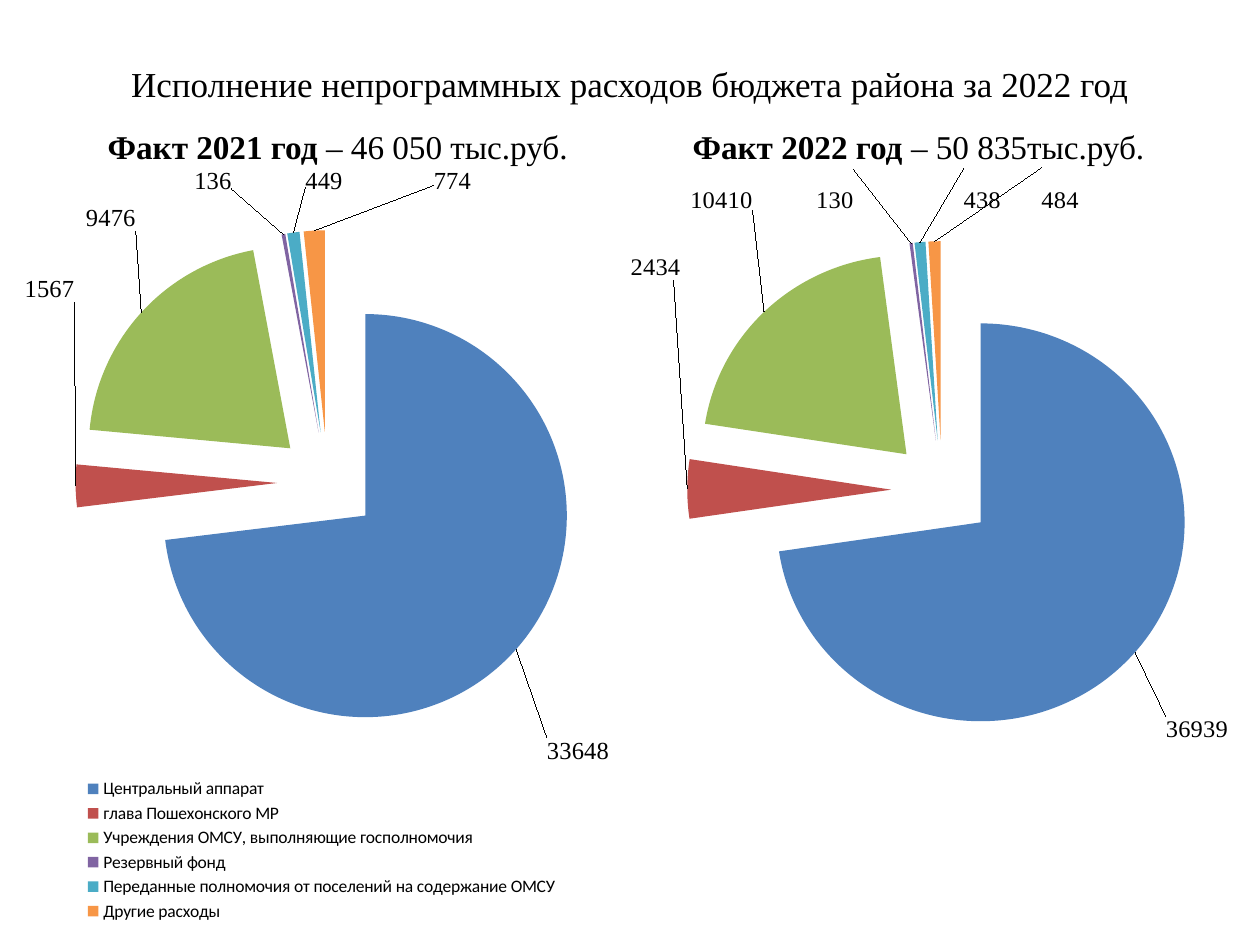
from dataclasses import dataclass

import pptx
import pptx.chart.data
import pptx.dml.color
import pptx.enum.chart
import pptx.enum.text
import pptx.oxml
import pptx.oxml.ns
import pptx.util

Inches, Pt = pptx.util.Inches, pptx.util.Pt
RGB = pptx.dml.color.RGBColor.from_string
qn = pptx.oxml.ns.qn


@dataclass(frozen=True)
class Theme:
    text: str = "000000"
    slices: tuple = ("4F81BD", "C0504D", "9BBB59", "8064A2", "4BACC6", "F79646")
    serif: str = "Times New Roman"
    sans: str = "Calibri"
    title: int = 20
    heading: int = 19
    label: int = 14
    legend: int = 10


@dataclass(frozen=True)
class Box:
    x: float
    y: float
    w: float
    h: float


@dataclass(frozen=True)
class YearPie:
    chart_box: Box
    heading_box: Box
    year: str
    total: str
    categories: tuple
    values: tuple
    plot: Box        # fractions of the chart
    shifts: tuple    # label offsets, fractions of the chart
    legend: Box | None = None


THEME = Theme()
TITLE = "Исполнение непрограммных расходов бюджета района за 2022 год"
EXPLOSION = 25
CATEGORIES = (
    "Центральный аппарат",
    "глава Пошехонского МР",
    "Учреждения ОМСУ, выполняющие госполномочия",
    "Резервный фонд",
    "Переданные полномочия от поселений на содержание ОМСУ",
    "Другие расходы",
)
PIES = (
    YearPie(
        Box(0, 1.33, 5, 6.02), Box(0.47, 1.02, 4.42, 0.35),
        "Факт 2021 год ", "– 46 050 тыс.руб.",
        CATEGORIES, (33648, 1567, 9476, 136, 449, 774),
        Box(0.12, 0.08, 0.8, 0.67),
        ((0.04, 0.11), (0.01, -0.26), (0, -0.1),
         (-0.08, -0.05), (0.08, -0.05), (0.22, -0.05)),
        Box(0.12, 0.8, 0.78, 0.2),
    ),
    YearPie(
        Box(5, 1.33, 5, 6.02), Box(5.08, 1.02, 4.42, 0.35),
        "Факт 2022 год ", "– 50 835тыс.руб.",
        ("1", "2", "3", "4", "5", "6"), (36939, 2434, 10410, 130, 438, 484),
        Box(0.09, 0, 0.81, 0.82),
        ((0.04, 0.08), (-0.01, -0.3), (-0.01, -0.13),
         (-0.09, -0.09), (0.1, -0.09), (0.2, -0.09)),
    ),
)


def set_font(font, name: str, size: int) -> None:
    font.name, font.size = name, Pt(size)
    font.color.rgb = RGB(THEME.text)


def add_text(s, box: Box, runs: tuple, size: int, anchor) -> None:
    """Add one centred line; runs are (text, bold) pairs."""
    sp = s.shapes.add_textbox(*map(Inches, (box.x, box.y, box.w, box.h)))
    tf = sp.text_frame
    tf.word_wrap, tf.vertical_anchor = True, anchor
    p = tf.paragraphs[0]
    p.alignment = pptx.enum.text.PP_ALIGN.CENTER
    set_font(p.font, THEME.serif, size)
    for text, bold in runs:
        r = p.add_run()
        r.text, r.font.bold = text, bold


def manual_layout(**parts):
    """Build a c:layout element from its named parts."""
    children = "".join(f'<c:{k} val="{v}"/>' for k, v in parts.items())
    return pptx.oxml.parse_xml(
        f'<c:layout {pptx.oxml.ns.nsdecls("c")}>'
        f"<c:manualLayout>{children}</c:manualLayout></c:layout>")


def drop_layout(parent) -> None:
    for old in parent.findall(qn("c:layout")):
        parent.remove(old)


def box_layout(box: Box, **target):
    return manual_layout(**target, xMode="edge", yMode="edge",
                         x=box.x, y=box.y, w=box.w, h=box.h)


def add_pie(s, pie: YearPie) -> None:
    data = pptx.chart.data.CategoryChartData()
    data.categories = pie.categories
    data.add_series("Series 1", pie.values)
    box = pie.chart_box
    chart = s.shapes.add_chart(
        pptx.enum.chart.XL_CHART_TYPE.PIE,
        *map(Inches, (box.x, box.y, box.w, box.h)), data).chart
    chart.has_title = False
    set_font(chart.font, THEME.sans, THEME.legend)

    # Plot area
    plot = chart.plots[0]
    plot.vary_by_categories = True
    area = chart._chartSpace.chart.plotArea
    drop_layout(area)
    area.insert(0, box_layout(pie.plot, layoutTarget="inner"))

    # Exploded slices
    series = plot.series[0]
    ser = series._element
    explosion = pptx.oxml.parse_xml(
        f'<c:explosion {pptx.oxml.ns.nsdecls("c")} val="{EXPLOSION}"/>')
    ser.find(qn("c:tx")).addnext(explosion)
    for i, color in enumerate(THEME.slices):
        fill = series.points[i].format.fill
        fill.solid()
        fill.fore_color.rgb = RGB(color)

    # Value labels, moved away from their slices
    labels = series.data_labels
    labels.show_value = True
    set_font(labels.font, THEME.serif, THEME.label)
    for i in range(len(pie.values)):
        label = series.points[i].data_label
        label.position = pptx.enum.chart.XL_LABEL_POSITION.BEST_FIT
        set_font(label.font, THEME.serif, THEME.label)
    for dLbl, (x, y) in zip(ser.xpath("c:dLbls/c:dLbl"), pie.shifts):
        dLbl.insert(1, manual_layout(x=x, y=y))

    # Legend
    chart.has_legend = pie.legend is not None
    if pie.legend:
        chart.legend.position = pptx.enum.chart.XL_LEGEND_POSITION.BOTTOM
        chart.legend.include_in_layout = False
        set_font(chart.legend.font, THEME.sans, THEME.legend)
        legend = chart.legend._element
        drop_layout(legend)
        legend.find(qn("c:legendPos")).addnext(box_layout(pie.legend))


def main() -> None:
    prs = pptx.Presentation()
    prs.slide_width, prs.slide_height = Inches(10), Inches(7.5)
    s = prs.slides.add_slide(prs.slide_layouts[6])
    anchors = pptx.enum.text.MSO_ANCHOR
    add_text(s, Box(0.5, 0.3, 9, 0.72), ((TITLE, False),), THEME.title, anchors.MIDDLE)
    for pie in PIES:
        add_text(s, pie.heading_box, ((pie.year, True), (pie.total, False)),
                 THEME.heading, anchors.BOTTOM)
        add_pie(s, pie)
    prs.save("out.pptx")


if __name__ == "__main__":
    main()
